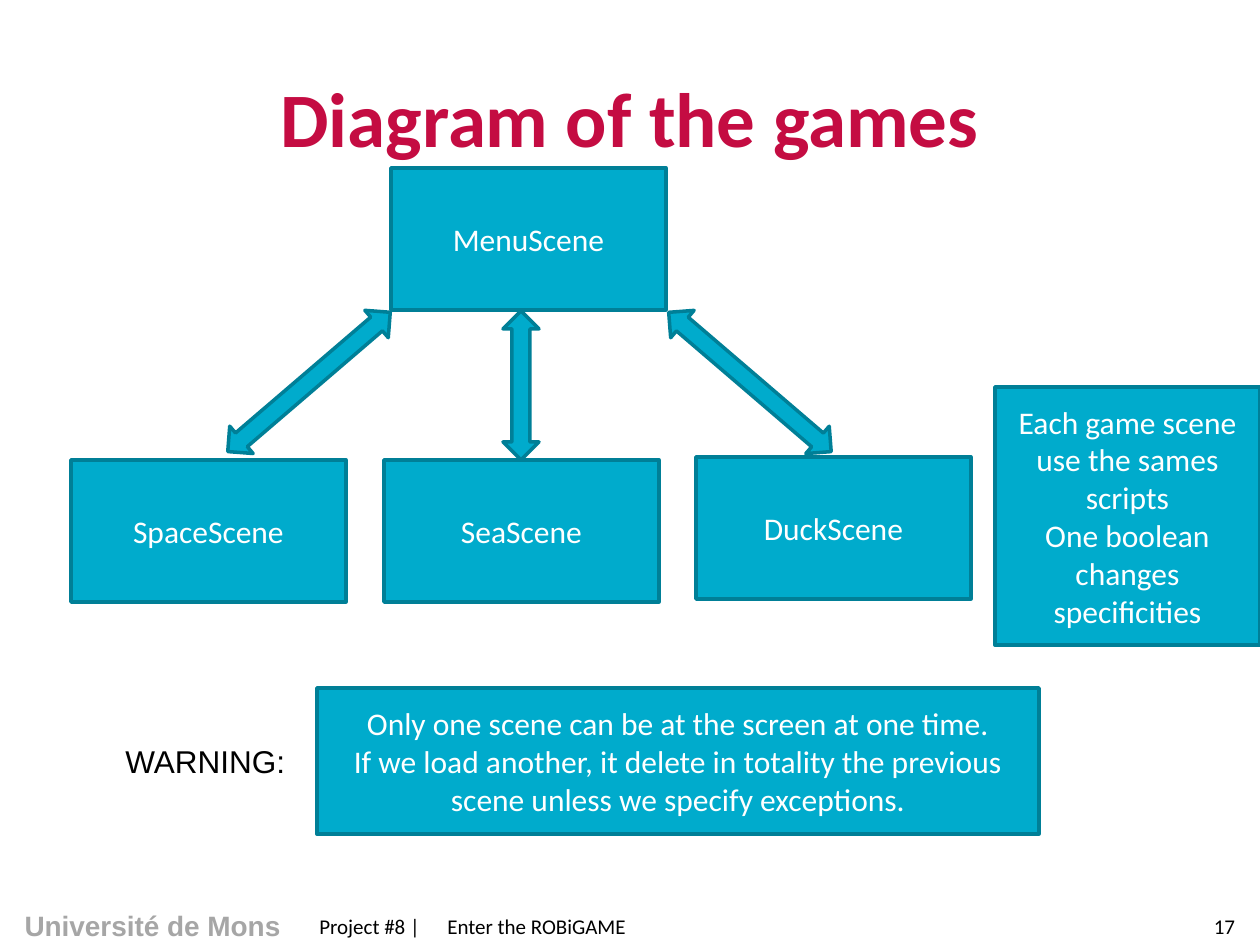
from pptx import Presentation, util as u
from pptx.dml.color import RGBColor
from pptx.enum import shapes, text
from pptx.oxml import parse_xml
from pptx.oxml.ns import nsdecls

EMU_PER_PX = 914400 / 126
FILL, EDGE, WHITE, BLACK = "00ABCC", "007F97", "FFFFFF", "000000"
CENTER, LEFT = text.PP_ALIGN.CENTER, text.PP_ALIGN.LEFT
MIDDLE, TOP = text.MSO_ANCHOR.MIDDLE, text.MSO_ANCHOR.TOP
SCENE_SIZE = (275, 142)
SCENES = [
    ("MenuScene", 391, 168),
    ("SpaceScene", 71, 460),
    ("SeaScene", 384, 460),
    ("DuckScene", 696, 457),
]
ARROWS = [(503, 311, 149, 0), (291, 275, 214, 49.4), (732, 275, 214, 310.6)]
NOTES = [
    ((995, 387, 265, 258),
     ["Each game scene use the sames scripts",
      "One boolean changes specificities"]),
    ((317, 688, 722, 146),
     ["Only one scene can be at the screen at one time.",
      "If we load another, it delete in totality the previous scene "
      "unless we specify exceptions."]),
]


def px(*lengths):
    """Turn pixel lengths into a list of EMU."""
    return [u.Emu(round(length * EMU_PER_PX)) for length in lengths]


def color(hex_code):
    """Turn a hex string into a colour."""
    return RGBColor.from_string(hex_code)


def write(box, lines, size, hex_code, font="Calibri", bold=False,
          align=CENTER, anchor=MIDDLE):
    """Fill a shape with one formatted paragraph per line."""
    frame = box.text_frame
    frame.word_wrap = True
    frame.vertical_anchor = anchor
    for index, line in enumerate(lines):
        para = frame.add_paragraph() if index else frame.paragraphs[0]
        para.alignment = align
        span = para.add_run()
        span.text = line
        span.font.name = font
        span.font.size = u.Pt(size)
        span.font.bold = bold
        span.font.color.rgb = color(hex_code)


def add_label(page, place, line, size, hex_code=BLACK, **style):
    """Add a one-line text box."""
    box = page.shapes.add_textbox(*px(*place))
    write(box, [line], size, hex_code, **style)
    return box


def add_block(page, kind, place):
    """Add a preset shape in the diagram's colours."""
    block = page.shapes.add_shape(kind, *px(*place))
    block.shadow.inherit = False
    block.fill.solid()
    block.fill.fore_color.rgb = color(FILL)
    block.line.color.rgb = color(EDGE)
    block.line.width = u.Pt(2)
    return block


def add_panel(page, place, lines):
    """Add a rectangle with centred white text."""
    panel = add_block(page, shapes.MSO_SHAPE.RECTANGLE, place)
    write(panel, lines, 18, WHITE)


def add_arrow(page, left, top, height, angle):
    """Add a double-headed block arrow turned by an angle."""
    arrow = add_block(page, shapes.MSO_SHAPE.UP_DOWN_ARROW,
                      (left, top, 36, height))
    arrow.rotation = angle


def add_title(page, line):
    """Place and format the title placeholder."""
    title = page.shapes.title
    title.left, title.top, title.width, title.height = px(63, 38, 1134, 157)
    write(title, [line], 44, "C40C42", bold=True)


def add_footer(page):
    """Add the university, project and page number labels."""
    add_label(page, (-1, 902, 307, 47), "Université de Mons", 16, "A6A6A6",
              font="Arial", bold=True, anchor=TOP)
    project = add_label(page, (307, 907, 882, 38),
                        "Project #8 |\tEnter the ROBiGAME", 12, align=LEFT)
    properties = project.text_frame.paragraphs[0]._p.get_or_add_pPr()
    properties.append(parse_xml(
        f'<a:tabLst {nsdecls("a")}><a:tab pos="{px(128)[0]}" algn="l"/>'
        '</a:tabLst>'))
    add_label(page, (1189, 907, 71, 38), "17", 12)


def main():
    """Build the slide and save it."""
    deck = Presentation()
    deck.slide_width, deck.slide_height = px(1260, 945)
    page = deck.slides.add_slide(deck.slide_layouts[5])
    add_title(page, "Diagram of the games")
    add_footer(page)
    for place, lines in NOTES:
        add_panel(page, place, lines)
    add_label(page, (113, 736, 294, 50), "WARNING:", 18, font="Arial",
              align=LEFT, anchor=TOP)
    for name, left, top in SCENES:
        add_panel(page, (left, top, *SCENE_SIZE), [name])
    for arrow in ARROWS:
        add_arrow(page, *arrow)
    deck.save("out.pptx")


if __name__ == "__main__":
    main()
